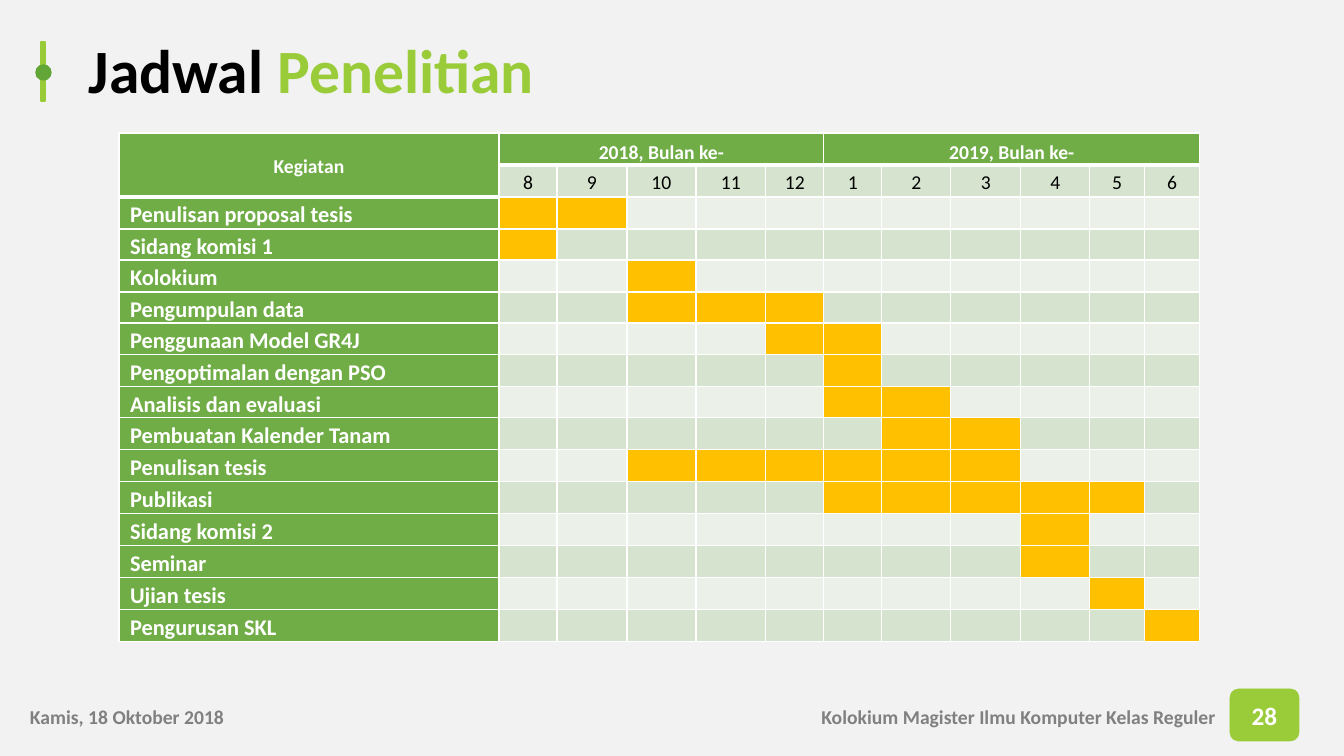
from lxml import etree
from pptx import Presentation
from pptx.dml.color import RGBColor
from pptx.enum.shapes import MSO_SHAPE
from pptx.enum.text import MSO_ANCHOR, PP_ALIGN
from pptx.oxml.ns import qn
from pptx.util import Emu, Pt

RECT, ROUND, OVAL = MSO_SHAPE.RECTANGLE, MSO_SHAPE.ROUNDED_RECTANGLE, MSO_SHAPE.OVAL
TOP, MIDDLE, BOTTOM = MSO_ANCHOR.TOP, MSO_ANCHOR.MIDDLE, MSO_ANCHOR.BOTTOM
LEFT, CENTER = PP_ALIGN.LEFT, PP_ALIGN.CENTER
WIDTH, HEIGHT = 1344, 756
EMU_PER_PX = 12192000 / WIDTH
COLORS = {
    "page": "F2F2F2", "black": "000000", "white": "FFFFFF", "gray": "808080",
    "lime": "9ACC39", "bar": "99CB38", "dot": "62A637", "header": "70AD47",
    "band": "D5E3CF", "light": "EBF1E9", "active": "FFC000",
}
MONTHS_2018 = [8, 9, 10, 11, 12]
MONTHS_2019 = [1, 2, 3, 4, 5, 6]
MONTHS = MONTHS_2018 + MONTHS_2019
ACTIVITIES = [
    ("Penulisan proposal tesis", 8, 9),
    ("Sidang komisi 1", 8, 8),
    ("Kolokium", 10, 10),
    ("Pengumpulan data", 10, 12),
    ("Penggunaan Model GR4J", 12, 1),
    ("Pengoptimalan dengan PSO", 1, 1),
    ("Analisis dan evaluasi", 1, 2),
    ("Pembuatan Kalender Tanam", 2, 3),
    ("Penulisan tesis", 10, 3),
    ("Publikasi", 1, 5),
    ("Sidang komisi 2", 4, 4),
    ("Seminar", 4, 4),
    ("Ujian tesis", 5, 5),
    ("Pengurusan SKL", 6, 6),
]
COLUMN_WIDTHS = [380, 58, 70, 69, 70, 58, 58, 69, 70, 69, 55, 55]
ROW_HEIGHTS = [32, 32, 32, 31, 32, 31, 32, 32, 31] + [32] * 7


def px(length):
    return Emu(round(length * EMU_PER_PX))


def rgb(name):
    return RGBColor.from_string(COLORS[name])


class SlideBuilder:
    font = "Calibri"

    def __init__(self, deck):
        self.slide = deck.slides.add_slide(deck.slide_layouts[6])
        self.paint(self.slide.background, "page")

    def paint(self, target, color):
        target.fill.solid()
        target.fill.fore_color.rgb = rgb(color)

    def add_runs(self, frame, runs, size, bold=True, align=LEFT, spacing=1.0):
        paragraph = frame.paragraphs[0]
        for name, value in {"alignment": align, "line_spacing": spacing}.items():
            setattr(paragraph, name, value)
        for words, color in runs:
            run = paragraph.add_run()
            run.text = words
            for name, value in {"name": self.font, "size": Pt(size), "bold": bold}.items():
                setattr(run.font, name, value)
            run.font.color.rgb = rgb(color)

    def text(self, box, runs, size, anchor=TOP, spacing=1.0, right_tab=None):
        frame = self.slide.shapes.add_textbox(*map(px, box)).text_frame
        for name, value in {"word_wrap": True, "vertical_anchor": anchor}.items():
            setattr(frame, name, value)
        if right_tab:
            properties = frame.paragraphs[0]._p.get_or_add_pPr()
            stops = etree.SubElement(properties, qn("a:tabLst"))
            etree.SubElement(stops, qn("a:tab"), pos=str(px(right_tab)), algn="r")
        self.add_runs(frame, runs, size, spacing=spacing)

    def shape(self, kind, box, color, line_width, label=None):
        shape = self.slide.shapes.add_shape(kind, *map(px, box))
        shape.shadow.inherit = False
        self.paint(shape, color)
        shape.line.color.rgb = rgb(color)
        shape.line.width = Pt(line_width)
        if label:
            shape.text_frame.vertical_anchor = MIDDLE
            self.add_runs(shape.text_frame, [(label, "white")], 18, align=CENTER)

    def table(self, left, top, widths, heights):
        table = self.slide.shapes.add_table(
            len(heights), len(widths), px(left), px(top), px(sum(widths)), px(sum(heights))
        ).table
        for name in ("first_row", "horz_banding"):
            setattr(table, name, False)
        for column, width in zip(table.columns, widths):
            column.width = px(width)
        for row, height in zip(table.rows, heights):
            row.height = px(height)
        return table

    def cell(self, cell, color, words="", text_color="white", size=14, bold=True,
             align=CENTER, anchor=MIDDLE, above=1, below=1):
        layout = {"margin_left": px(11), "margin_right": px(11), "margin_top": 0,
                  "margin_bottom": 0, "vertical_anchor": anchor}
        for name, value in layout.items():
            setattr(cell, name, value)
        if words:
            self.add_runs(cell.text_frame, [(words, text_color)], size, bold, align, 1.15)
        self.paint(cell, color)
        properties = cell._tc.get_or_add_tcPr()
        borders = {"a:lnL": 1, "a:lnR": 1, "a:lnT": above, "a:lnB": below}
        for index, (side, width) in enumerate(borders.items()):
            border = etree.Element(qn(side), w=str(Pt(width)))
            fill = etree.SubElement(border, qn("a:solidFill"))
            etree.SubElement(fill, qn("a:srgbClr"), val=COLORS["white"])
            properties.insert(index, border)


def add_schedule(builder):
    schedule = builder.table(119, 133, COLUMN_WIDTHS, ROW_HEIGHTS)
    second_year = 1 + len(MONTHS_2018)
    last = len(MONTHS)
    schedule.cell(0, 0).merge(schedule.cell(1, 0))
    schedule.cell(0, 1).merge(schedule.cell(0, second_year - 1))
    schedule.cell(0, second_year).merge(schedule.cell(0, last))
    years = {1: "2018, Bulan ke-", second_year: "2019, Bulan ke-"}
    builder.cell(schedule.cell(0, 0), "header", "Kegiatan", below=3)
    builder.cell(schedule.cell(1, 0), "header", below=3)
    for column, month in enumerate(MONTHS, 1):
        builder.cell(schedule.cell(0, column), "header", years.get(column, ""),
                     anchor=BOTTOM, below=3)
        builder.cell(schedule.cell(1, column), "band", str(month), "black",
                     bold=False, above=3)
    for row, (activity, start, end) in enumerate(ACTIVITIES, 2):
        builder.cell(schedule.cell(row, 0), "header", activity, size=16, align=LEFT,
                     above=3 if row == 2 else 1)
        idle = "band" if row % 2 else "light"
        for column in range(1, last + 1):
            busy = MONTHS.index(start) < column <= MONTHS.index(end) + 1
            builder.cell(schedule.cell(row, column), "active" if busy else idle)


def main():
    deck = Presentation()
    deck.slide_width, deck.slide_height = px(WIDTH), px(HEIGHT)
    builder = SlideBuilder(deck)
    builder.text((79, 24, 1220, 99), [("Jadwal", "black"), (" Penelitian", "lime")], 44,
                 anchor=MIDDLE, spacing=0.9)
    builder.shape(ROUND, (1230, 689, 69, 52), "lime", 0.5, "28")
    footer = "Kamis, 18 Oktober 2018\tKolokium Magister Ilmu Komputer Kelas Reguler"
    builder.text((20, 700, 1279, 34), [(footer, "gray")], 14, right_tab=1186)
    builder.shape(RECT, (41, 42, 4, 59), "bar", 1)
    builder.shape(OVAL, (36, 65, 15, 15), "dot", 1)
    add_schedule(builder)
    deck.save("out.pptx")


if __name__ == "__main__":
    main()
